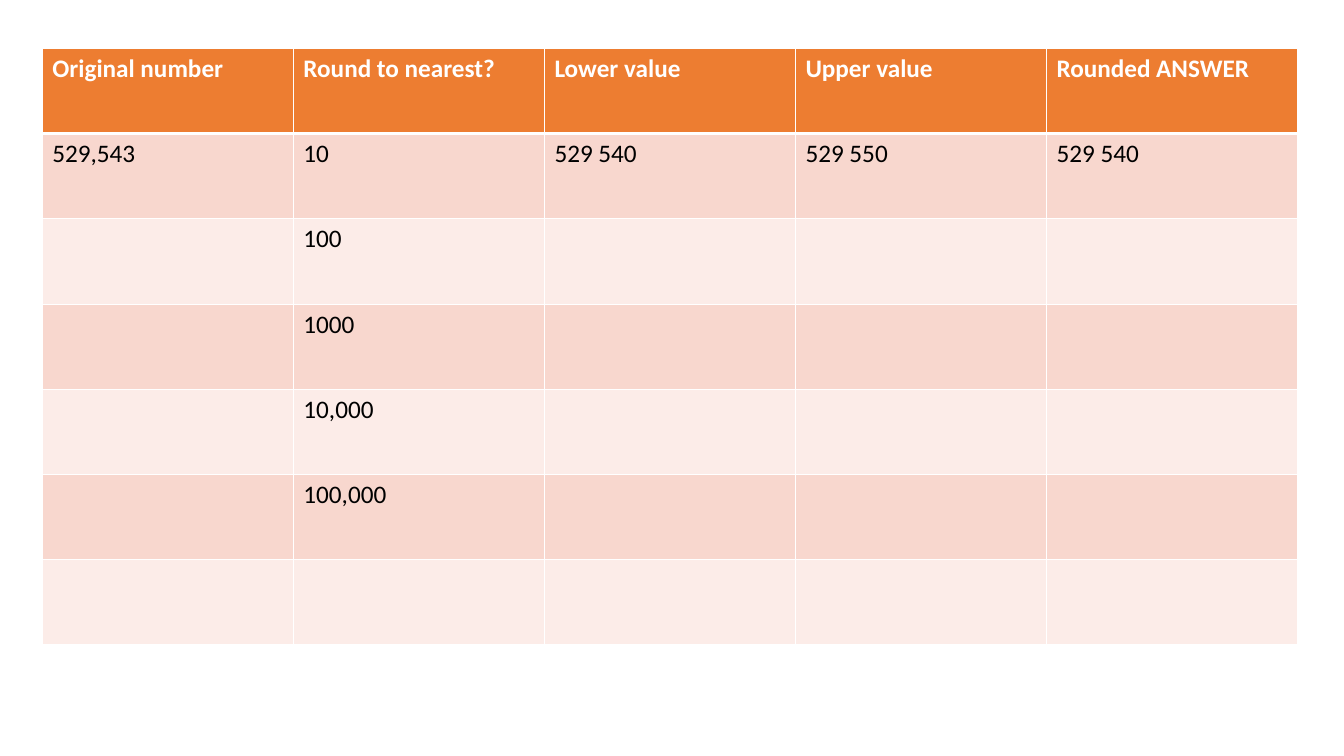
from dataclasses import dataclass

from lxml import etree
from pptx import Presentation
from pptx import util as u
from pptx.dml.color import RGBColor
from pptx.oxml.ns import qn


@dataclass(frozen=True)
class Theme:
    font: str = "Calibri"
    size: int = 18
    header_fill: str = "ED7D31"
    header_text: str = "FFFFFF"
    band_fills: tuple = ("F8D7CE", "FCECE8")
    body_text: str = "000000"
    border: str = "FFFFFF"
    thin: int = 1
    thick: int = 3


THEME = Theme()
HEADERS = ["Original number", "Round to nearest?", "Lower value", "Upper value", "Rounded ANSWER"]
ROWS = [
    ["529,543", "10", "529 540", "529 550", "529 540"],
    ["", "100", "", "", ""],
    ["", "1000", "", "", ""],
    ["", "10,000", "", "", ""],
    ["", "100,000", "", "", ""],
    ["", "", "", "", ""],
]


def set_borders(cell, top, bottom):
    """Draw all four sides; top and bottom widths are in points."""
    tc_pr = cell._tc.get_or_add_tcPr()
    sides = {"a:lnL": THEME.thin, "a:lnR": THEME.thin, "a:lnT": top, "a:lnB": bottom}
    for i, (tag, width) in enumerate(sides.items()):
        ln = etree.Element(qn(tag), w=str(u.Pt(width)))
        fill = etree.SubElement(ln, qn("a:solidFill"))
        etree.SubElement(fill, qn("a:srgbClr"), val=THEME.border)
        tc_pr.insert(i, ln)


def style_cell(cell, value, row):
    header = row == 0
    fill = THEME.header_fill if header else THEME.band_fills[(row - 1) % 2]
    cell.fill.solid()
    cell.fill.fore_color.rgb = RGBColor.from_string(fill)
    set_borders(cell, THEME.thick if row == 1 else THEME.thin,
                THEME.thick if header else THEME.thin)
    p = cell.text_frame.paragraphs[0]
    p.text = value
    p.font.size = u.Pt(THEME.size)
    for r in p.runs:
        r.font.name = THEME.font
        r.font.size = u.Pt(THEME.size)
        r.font.bold = header
        r.font.color.rgb = RGBColor.from_string(THEME.header_text if header else THEME.body_text)


def add_rounding_table(slide, left, top, width, height):
    rows = [HEADERS] + ROWS
    table = slide.shapes.add_table(len(rows), len(HEADERS), left, top, width, height).table
    for row, values in enumerate(rows):
        for col, value in enumerate(values):
            style_cell(table.cell(row, col), value, row)


def main():
    prs = Presentation()
    prs.slide_width, prs.slide_height = u.Inches(13.33), u.Inches(7.5)
    slide = prs.slides.add_slide(prs.slide_layouts[6])
    add_rounding_table(slide, u.Inches(0.42), u.Inches(0.48), u.Inches(12.45), u.Inches(5.92))
    prs.save("out.pptx")


if __name__ == "__main__":
    main()
